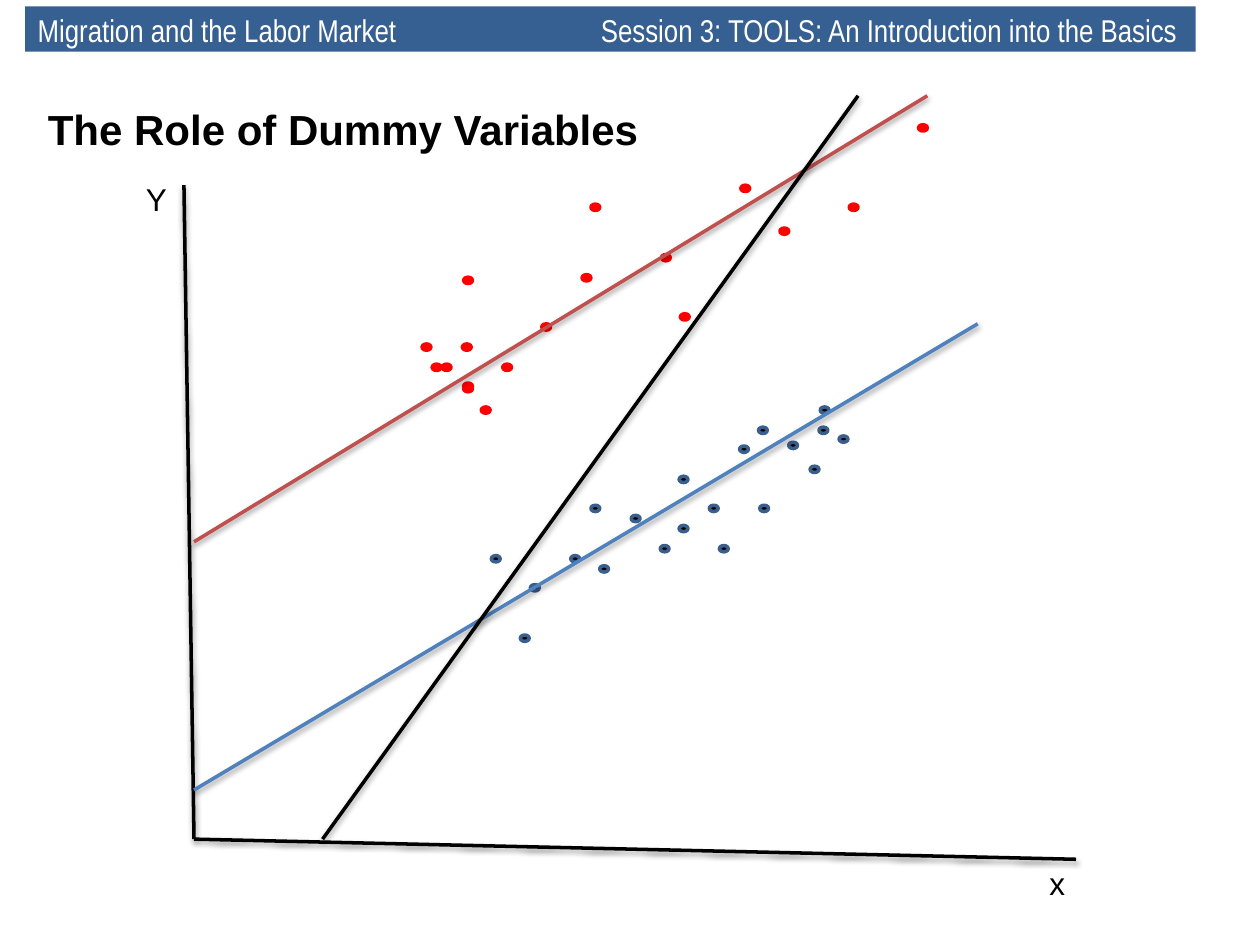
import lxml.etree
import pptx
import pptx.util
from pptx.dml.color import RGBColor
from pptx.enum.shapes import MSO_CONNECTOR, MSO_SHAPE
from pptx.enum.text import MSO_ANCHOR, PP_ALIGN
from pptx.oxml.ns import qn

PX = 9144  # EMU per px, 100 px to the inch
COLORS = {
    "black": "000000", "white": "FFFFFF", "header": "376092",
    "blue_dot": "3A5F8C", "blue_line": "4F81BD",
    "red_dot": "FF0000", "red_line": "C0504D",
}
DOT_W, DOT_H = 7, 5

# Dot corners, relative to the plot box
BLUE_DOTS = [
    (551, 253), (566, 276), (543, 300), (502, 269), (526, 281),
    (550, 269), (471, 363), (439, 347), (439, 308), (463, 331),
    (487, 284), (369, 331), (290, 371), (376, 379), (313, 434),
    (503, 331), (353, 371), (401, 339), (424, 363), (321, 394),
]
RED_DOTS = [
    (235, 203), (243, 219), (267, 203), (299, 219), (251, 219),
    (362, 148), (330, 187), (268, 150), (440, 179), (425, 132),
    (369, 92), (268, 234), (488, 77), (519, 111), (268, 236),
    (574, 92), (629, 29), (282, 253),
]


def px(*values):
    return [pptx.util.Emu(v * PX) for v in values]


def rgb(name):
    return RGBColor.from_string(COLORS[name])


def style(p, size, color, font="Arial", bold=False):
    p.font.name = font
    p.font.size = pptx.util.Pt(size)
    p.font.bold = bold
    p.font.color.rgb = rgb(color)


def add_line(s, box, start, end, color):
    x, y = box[:2]
    line = s.shapes.add_connector(
        MSO_CONNECTOR.STRAIGHT,
        *px(x + start[0], y + start[1], x + end[0], y + end[1]))
    line.line.color.rgb = rgb(color)
    line.line.width = pptx.util.Pt(2)
    # Soft shadow straight below the line
    effects = lxml.etree.SubElement(line._element.spPr, qn("a:effectLst"))
    shadow = lxml.etree.SubElement(
        effects, qn("a:outerShdw"), blurRad="40000", dist="20000",
        dir="5400000", rotWithShape="0")
    tone = lxml.etree.SubElement(shadow, qn("a:srgbClr"), val=COLORS["black"])
    lxml.etree.SubElement(tone, qn("a:alpha"), val="38000")


def add_dots(s, box, corners, fill, outline):
    for x, y in corners:
        dot = s.shapes.add_shape(
            MSO_SHAPE.OVAL, *px(box[0] + x, box[1] + y, DOT_W, DOT_H))
        dot.shadow.inherit = False
        dot.fill.solid()
        dot.fill.fore_color.rgb = rgb(fill)
        dot.line.color.rgb = rgb(outline)
        dot.line.width = pptx.util.Pt(2)


def add_label(s, box, x, y, width, text):
    sp = s.shapes.add_textbox(*px(box[0] + x, box[1] + y, width, 40))
    sp.text_frame.word_wrap = False
    p = sp.text_frame.paragraphs[0]
    p.text = text
    style(p, 18, "black")


def add_title(s, box, text):
    sp = s.shapes.title
    sp.left, sp.top, sp.width, sp.height = px(*box)
    tf = sp.text_frame
    tf.vertical_anchor = MSO_ANCHOR.TOP
    tf.word_wrap = True
    p = tf.paragraphs[0]
    p.text = text
    p.alignment = PP_ALIGN.LEFT
    style(p, 24, "black", bold=True)


def add_plot(s, box):
    # Axes and their labels
    origin = (54, 596)
    add_line(s, box, (46, 77), origin, "black")
    add_line(s, box, origin, (754, 612), "black")
    add_label(s, box, 6, 68, 37, "Y")
    add_label(s, box, 723, 611, 33, "x")
    # Two groups of observations
    add_dots(s, box, BLUE_DOTS, "black", "blue_dot")
    add_dots(s, box, RED_DOTS, "red_dot", "red_dot")
    # Group regression lines and the pooled one
    add_line(s, box, (54, 360), (636, 6), "red_line")
    add_line(s, box, (54, 557), (676, 187), "blue_line")
    add_line(s, box, (156, 596), (581, 6), "black")


def add_header(s, box, course, session):
    sp = s.shapes.add_shape(MSO_SHAPE.RECTANGLE, *px(*box))
    sp.shadow.inherit = False
    sp.fill.solid()
    sp.fill.fore_color.rgb = rgb("header")
    sp.line.fill.background()
    tf = sp.text_frame
    tf.vertical_anchor = MSO_ANCHOR.MIDDLE
    tf.margin_top, tf.margin_bottom = px(6, 4)
    p = tf.paragraphs[0]
    p.text = f"{course}\t{session}"
    p.alignment = PP_ALIGN.LEFT
    style(p, 18, "white", font="Arial Narrow")
    # Tab stop where the session name starts
    tabs = lxml.etree.Element(qn("a:tabLst"))
    lxml.etree.SubElement(tabs, qn("a:tab"), pos=str(447 * PX), algn="l")
    p._p.get_or_add_pPr().insert(0, tabs)


def main():
    prs = pptx.Presentation()
    prs.slide_width, prs.slide_height = px(1000, 750)
    s = prs.slides.add_slide(prs.slide_layouts[5])
    add_title(s, (28, 77, 906, 424), "The Role of Dummy Variables")
    add_plot(s, (100, 70, 760, 660))
    add_header(s, (20, 5, 929, 36), "Migration and the Labor Market",
               "Session 3: TOOLS: An Introduction into the Basics")
    prs.save("out.pptx")


if __name__ == "__main__":
    main()
